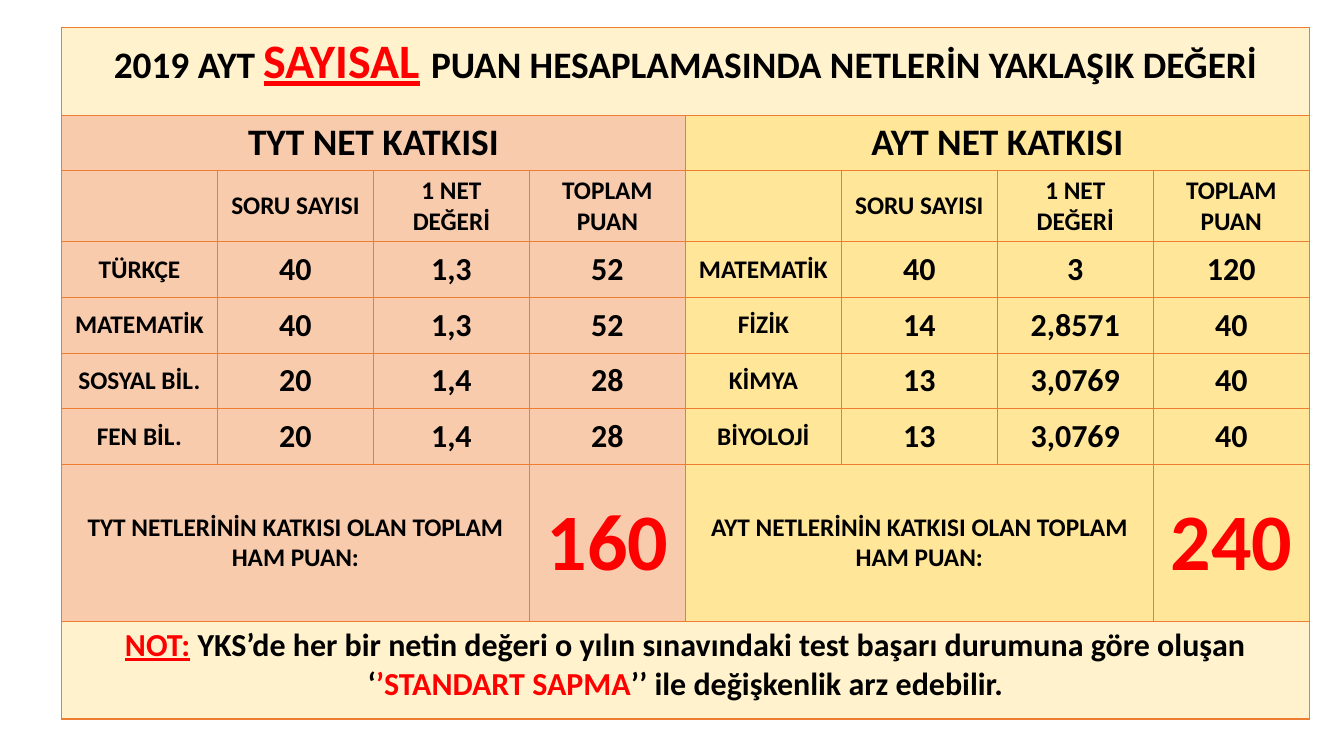
from lxml.etree import SubElement
from pptx import Presentation
from pptx.dml.color import RGBColor
from pptx.enum.text import MSO_ANCHOR, PP_ALIGN
from pptx.oxml.ns import qn
from pptx.util import Inches, Pt

THEME = {
    "font": "Calibri", "ink": "000000", "red": "FF0000", "line": "ED7D31",
    "cream": "FFF2CC", "peach": "F8CBAD", "gold": "FFE699",
    "label": 19, "value": 24, "head": 28, "accent": 36, "total": 60,
}

# Content: a text is a list of paragraphs, each a list of (words, format) runs
TITLE = [[
    ("2019 AYT ", {}),
    ("SAYISAL", {"size": "accent", "color": "red", "under": True}),
    (" ", {"size": "accent"}),
    ("PUAN HESAPLAMASINDA NETLERİN YAKLAŞIK DEĞERİ", {}),
]]
NOTE = [[
    ("NOT:", {"color": "red", "under": True}),
    (" YKS’de her bir netin değeri o yılın sınavındaki test başarı "
     "durumuna göre oluşan ‘", {}),
    ("’STANDART SAPMA", {"color": "red"}),
    ("’’ ile değişkenlik arz edebilir.", {}),
]]
HEADS = ["SORU SAYISI", "1 NET\nDEĞERİ", "TOPLAM PUAN"]
HALVES = [
    {"exam": "TYT", "fill": "peach", "total": "160", "rows": [
        ("TÜRKÇE", "40", "1,3", "52"),
        ("MATEMATİK", "40", "1,3", "52"),
        ("SOSYAL BİL.", "20", "1,4", "28"),
        ("FEN BİL.", "20", "1,4", "28"),
    ]},
    {"exam": "AYT", "fill": "gold", "total": "240", "rows": [
        ("MATEMATİK", "40", "3", "120"),
        ("FİZİK", "14", "2,8571", "40"),
        ("KİMYA", "13", "3,0769", "40"),
        ("BİYOLOJİ", "13", "3,0769", "40"),
    ]},
]
HEIGHTS = [0.91, 0.53, 0.69] + [0.58] * 4 + [1.63, 1.02]
COLS, WIDTH = 8, 13
HALF = COLS // 2


def tint(name):
    return RGBColor.from_string(THEME[name])


def write(cell, text, size="value", color="ink", middle=True):
    """Fill a cell with a plain string or with formatted runs."""
    if isinstance(text, str):
        text = [[(line, {})] for line in text.split("\n")]
    if middle:
        cell.vertical_anchor = MSO_ANCHOR.MIDDLE
    frame = cell.text_frame
    for i, runs in enumerate(text):
        para = frame.add_paragraph() if i else frame.paragraphs[0]
        para.alignment = PP_ALIGN.CENTER
        for words, style in runs:
            run = para.add_run()
            run.text = words
            font = run.font
            font.name, font.bold = THEME["font"], True
            font.size = Pt(THEME[style.get("size", size)])
            font.color.rgb = tint(style.get("color", color))
            font.underline = style.get("under", False)


def paint(cell, fill):
    """Give a cell its four borders and its fill."""
    props = cell._tc.get_or_add_tcPr()
    for side in ("lnL", "lnR", "lnT", "lnB"):
        line = SubElement(props, qn(f"a:{side}"), w=str(Pt(1)))
        solid = SubElement(line, qn("a:solidFill"))
        SubElement(solid, qn("a:srgbClr"), val=THEME["line"])
    cell.fill.solid()
    cell.fill.fore_color.rgb = tint(fill)


def join(grid, row, first, count):
    cell = grid.cell(row, first)
    cell.merge(grid.cell(row, first + count - 1))
    return cell


def main():
    deck = Presentation()
    deck.slide_width, deck.slide_height = Inches(14), Inches(7.87)
    slide = deck.slides.add_slide(deck.slide_layouts[6])

    # Table grid, borders and fills
    last = len(HEIGHTS) - 1
    grid = slide.shapes.add_table(
        len(HEIGHTS), COLS, Inches(0.64), Inches(0.29),
        Inches(WIDTH), Inches(sum(HEIGHTS))).table
    grid.first_row = grid.horz_banding = False
    for col in grid.columns:
        col.width = Inches(WIDTH / COLS)
    for r, height in enumerate(HEIGHTS):
        grid.rows[r].height = Inches(height)
        for c in range(COLS):
            band = "cream" if r in (0, last) else HALVES[c // HALF]["fill"]
            paint(grid.cell(r, c), band)

    # Title and note across the full width
    write(join(grid, 0, 0, COLS), TITLE, size="head", middle=False)
    write(join(grid, last, 0, COLS), NOTE, middle=False)

    # One half per exam: heading, column heads, subjects, total
    for h, half in enumerate(HALVES):
        left, exam = h * HALF, half["exam"]
        write(join(grid, 1, left, HALF), f"{exam} NET KATKISI",
              size="head", middle=False)
        for c, head in enumerate(HEADS, left + 1):
            write(grid.cell(2, c), head, size="label")
        for r, row in enumerate(half["rows"], 3):
            for c, text in enumerate(row):
                write(grid.cell(r, left + c), text,
                      size="value" if c else "label")
        write(join(grid, last - 1, left, HALF - 1),
              f"{exam} NETLERİNİN KATKISI OLAN TOPLAM HAM PUAN:", size="label")
        write(grid.cell(last - 1, left + HALF - 1), half["total"],
              size="total", color="red")

    deck.save("out.pptx")


if __name__ == "__main__":
    main()
